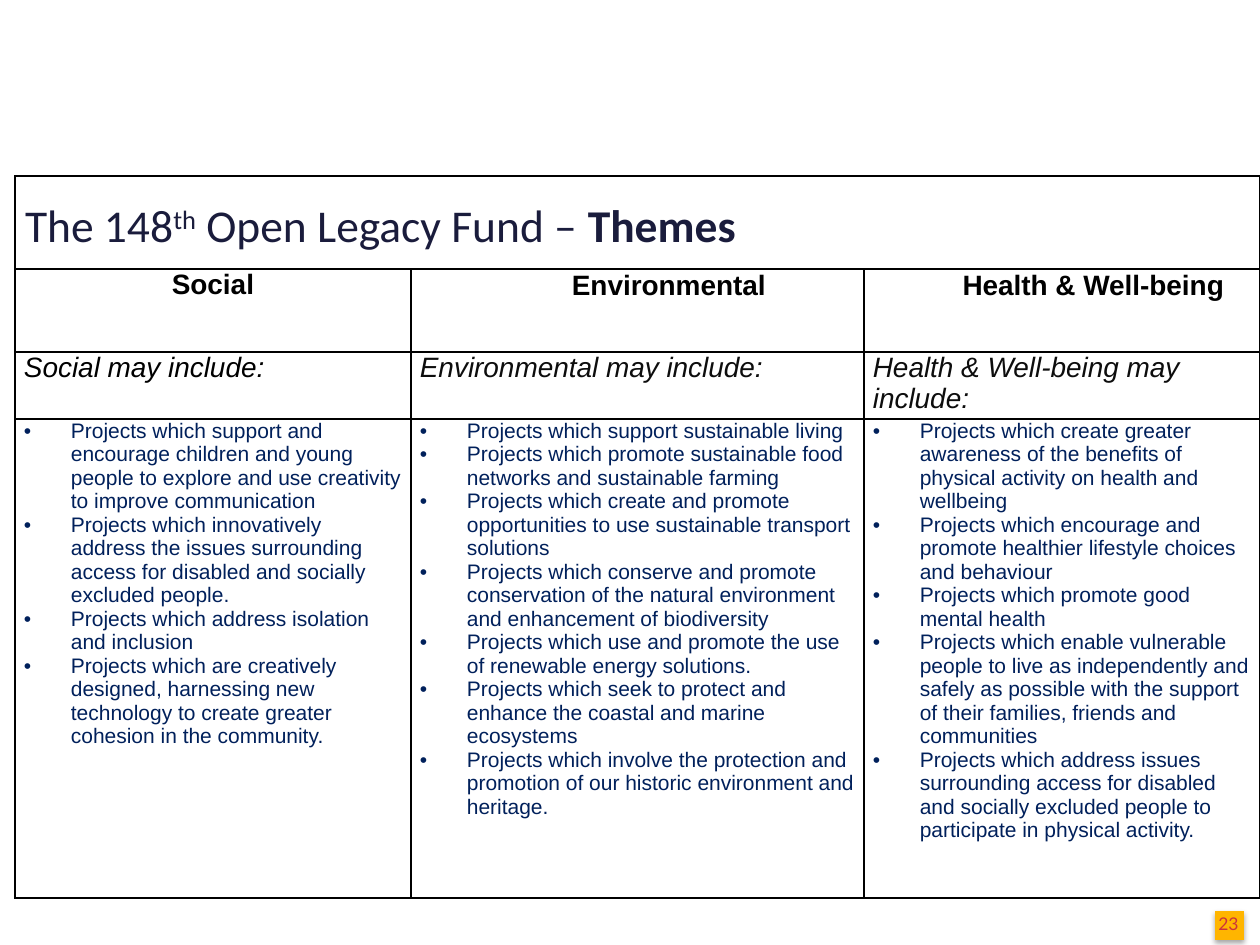
from lxml.etree import SubElement
from pptx import Presentation
from pptx.dml.color import RGBColor
from pptx.enum.shapes import MSO_SHAPE
from pptx.enum.text import MSO_ANCHOR, MSO_AUTO_SIZE, PP_ALIGN
from pptx.oxml import parse_xml
from pptx.oxml.ns import nsdecls, qn
from pptx.util import Pt

PX = 914400 / 126
BLACK = RGBColor(0x00, 0x00, 0x00)
NEAR_BLACK = RGBColor(0x0D, 0x0D, 0x0D)
NAVY = RGBColor(0x00, 0x20, 0x5B)
INK = RGBColor(0x1A, 0x1C, 0x3C)
GOLD = RGBColor(0xFF, 0xB5, 0x00)
RED = RGBColor(0xCB, 0x33, 0x3B)
WHITE = RGBColor(0xFF, 0xFF, 0xFF)


def px(*lengths):
    return [round(length * PX) for length in lengths]


def add_text(paragraph, text, color, **formats):
    run = paragraph.add_run()
    run.text = text
    run.font.color.rgb = color
    for name, value in formats.items():
        setattr(run.font, name, value)
    return run


HEADING = {"name": "Arial", "size": Pt(16), "bold": True}
INTRO = {"name": "Arial", "size": Pt(16), "italic": True}
BODY = {"name": "Arial", "size": Pt(12)}
TITLE = {"name": "Calibri", "size": Pt(26)}

themes = [
    ("Social", BLACK, [
        "Projects which support and encourage children and young people to explore and use creativity to improve communication",
        "Projects which innovatively address the issues surrounding access for disabled and socially excluded people.",
        "Projects which address isolation and inclusion",
        "Projects which are creatively designed, harnessing new technology to create greater cohesion in the community.",
    ]),
    ("Environmental", NEAR_BLACK, [
        "Projects which support sustainable living",
        "Projects which promote sustainable food networks and sustainable farming",
        "Projects which create and promote opportunities to use sustainable transport solutions",
        "Projects which conserve and promote conservation of the natural environment and enhancement of biodiversity",
        "Projects which use and promote the use of renewable energy solutions.",
        "Projects which seek to protect and enhance the coastal and marine ecosystems",
        "Projects which involve the protection and promotion of our historic environment and heritage.",
    ]),
    ("Health & Well-being", NEAR_BLACK, [
        "Projects which create greater awareness of the benefits of physical activity on health and wellbeing",
        "Projects which encourage and promote healthier lifestyle choices and behaviour",
        "Projects which promote good mental health",
        "Projects which enable vulnerable people to live as independently and safely as possible with the support of their families, friends and communities",
        "Projects which address issues surrounding access for disabled and socially excluded people to participate in physical activity.",
    ]),
]

prs = Presentation()
prs.slide_width, prs.slide_height = px(1260, 945)
slide = prs.slides.add_slide(prs.slide_layouts[5])

badge = slide.shapes.add_shape(MSO_SHAPE.RECTANGLE, *px(1215, 911, 29, 29))
badge.fill.solid()
badge.fill.fore_color.rgb = GOLD
badge.line.fill.background()
badge.shadow.inherit = False
badge.element.spPr.find(qn("a:effectLst")).append(parse_xml(
    f'<a:outerShdw {nsdecls("a")} blurRad="{Pt(3.1)}" dist="{Pt(1.8)}" dir="5400000" rotWithShape="0">'
    '<a:srgbClr val="000000"><a:alpha val="35000"/></a:srgbClr></a:outerShdw>'))

page_number = slide.shapes.add_textbox(*px(1215, 905, 40, 38)).text_frame
page_format = {
    "word_wrap": True, "vertical_anchor": MSO_ANCHOR.MIDDLE, "margin_left": 0,
    "margin_top": 0, "margin_right": px(13)[0], "margin_bottom": 0,
}
for name, value in page_format.items():
    setattr(page_number, name, value)
page_number.paragraphs[0].alignment = PP_ALIGN.CENTER
add_text(page_number.paragraphs[0], "23", RED, name="Lato", size=Pt(10))

table = slide.shapes.add_table(4, 3, *px(15, 176, 1245, 722)).table
table.first_row = False
table.horz_banding = False
for column, width in zip(table.columns, px(396, 453, 396)):
    column.width = width
for row, height in zip(table.rows, px(93, 83, 67, 479)):
    row.height = height

cell_format = dict(zip(
    ["margin_left", "margin_top", "margin_right", "margin_bottom"], px(9, 0, 9, 0)))
for cell in table.iter_cells():
    for name, value in cell_format.items():
        setattr(cell, name, value)
    properties = cell._tc.get_or_add_tcPr()
    for side in ["lnL", "lnR", "lnT", "lnB"]:
        properties.append(parse_xml(
            f'<a:{side} {nsdecls("a")} w="{Pt(1)}"><a:solidFill><a:srgbClr val="{BLACK}"/>'
            f'</a:solidFill></a:{side}>'))
    cell.fill.solid()
    cell.fill.fore_color.rgb = WHITE
table.cell(0, 0).merge(table.cell(0, 2))

for index, (theme, intro_color, projects) in enumerate(themes):
    heading = table.cell(1, index).text_frame.paragraphs[0]
    heading.alignment = PP_ALIGN.CENTER
    if index:
        heading.line_spacing = 1.05
        heading._p.get_or_add_pPr().set("marL", str(px(63)[0]))
    add_text(heading, theme, BLACK, **HEADING)

    intro = table.cell(2, index).text_frame.paragraphs[0]
    add_text(intro, f"{theme} may include:", intro_color, **INTRO)

    project_list = table.cell(3, index).text_frame
    for number, project in enumerate(projects):
        item = project_list.add_paragraph() if number else project_list.paragraphs[0]
        properties = item._p.get_or_add_pPr()
        properties.set("marL", str(px(47)[0]))
        properties.set("indent", str(px(-47)[0]))
        SubElement(properties, qn("a:buFont"), typeface="Arial")
        SubElement(properties, qn("a:buChar"), char="•")
        add_text(item, project, NAVY, **BODY)

title = slide.shapes.title
title.left, title.top, title.width, title.height = px(25, 193, 1152, 63)
title_format = {**page_format, "auto_size": MSO_AUTO_SIZE.NONE}
for name, value in title_format.items():
    setattr(title.text_frame, name, value)
title_line = title.text_frame.paragraphs[0]
title_line.alignment = PP_ALIGN.LEFT
add_text(title_line, "The 148", INK, **TITLE)
ordinal = add_text(title_line, "th", INK, **TITLE)
ordinal.font._element.set("baseline", "30000")
add_text(title_line, " Open Legacy Fund – ", INK, **TITLE)
add_text(title_line, "Themes", INK, bold=True, **TITLE)
title.element.getparent().append(title.element)

prs.save("out.pptx")
